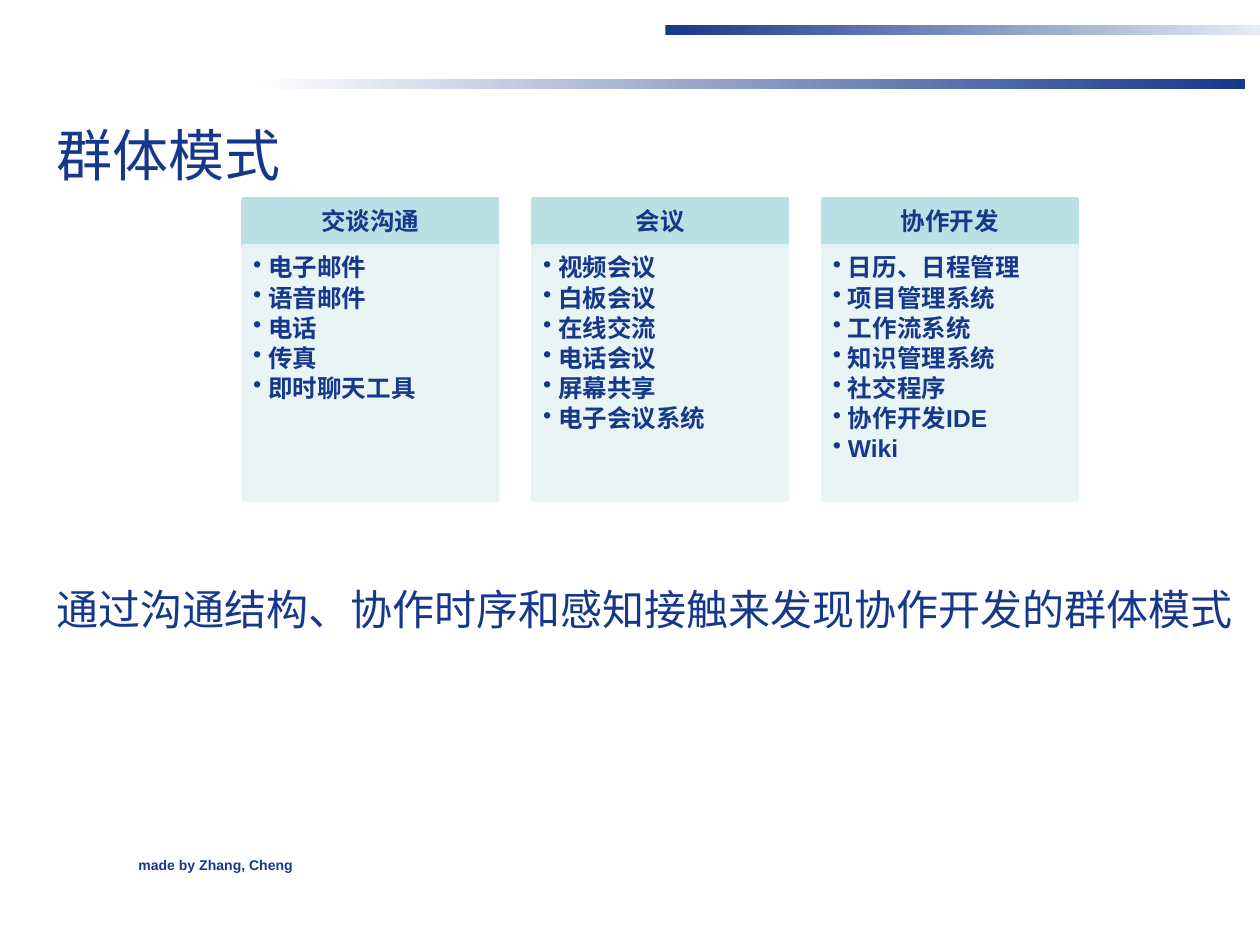
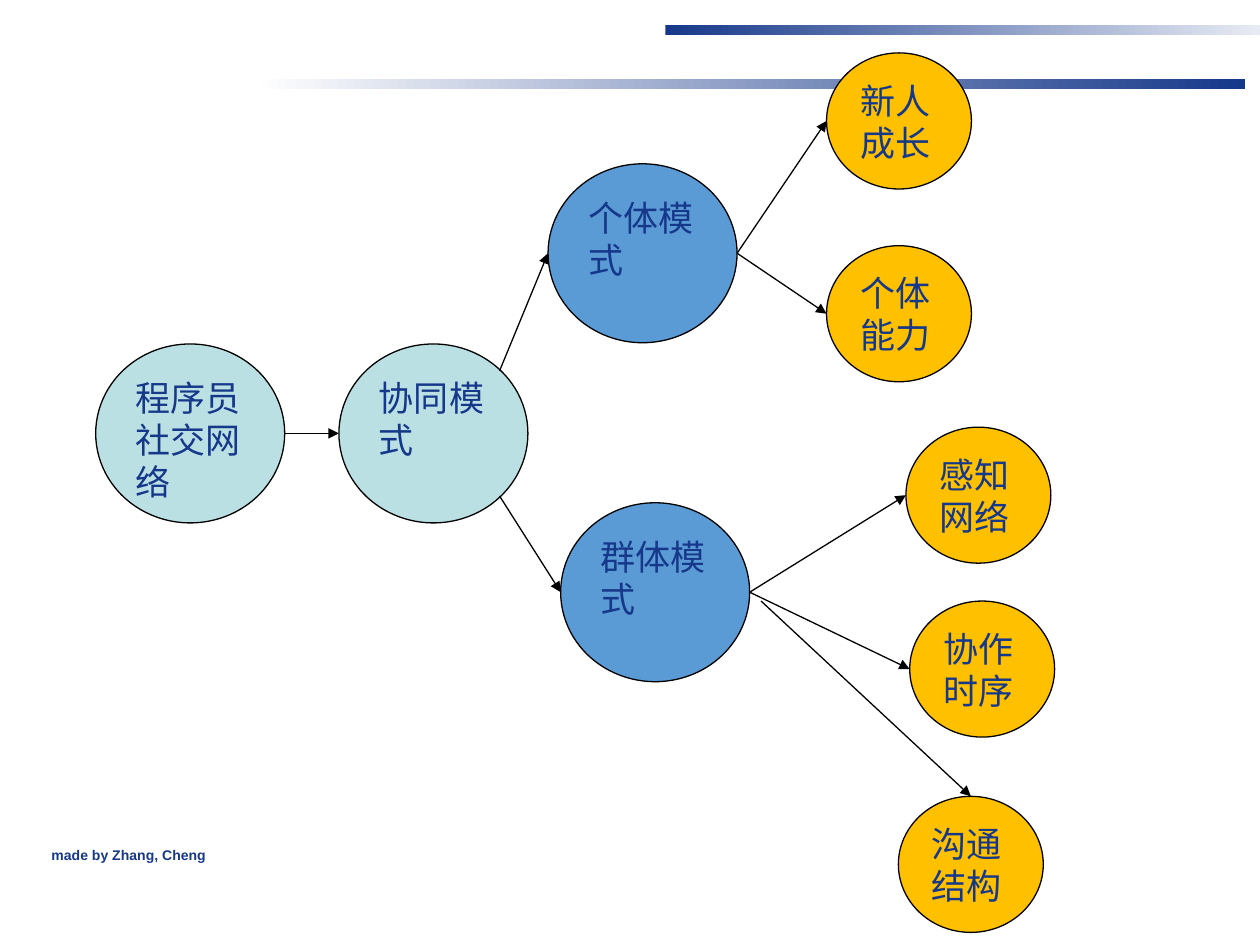
from dataclasses import dataclass

from lxml import etree
from pptx import Presentation
from pptx.dml.color import RGBColor
from pptx.enum import shapes, text
from pptx.oxml import ns
from pptx.util import Inches, Pt


@dataclass(frozen=True)
class Theme:
    font: str = "Arial"
    navy: str = "16388A"
    white: str = "FFFFFF"
    mist: str = "E7EBF3"
    teal: str = "BBE0E3"
    pale_teal: str = "E7F3F4"
    blue: str = "5B9BD5"
    amber: str = "FFC000"
    black: str = "000000"
    title_size: int = 32
    statement_size: int = 24
    node_size: int = 20
    card_size: int = 14
    footer_size: int = 8


THEME = Theme()
TITLE_ONLY, BLANK = 5, 6

CARDS = {
    "交谈沟通": ["电子邮件", "语音邮件", "电话", "传真", "即时聊天工具"],
    "会议": ["视频会议", "白板会议", "在线交流", "电话会议", "屏幕共享", "电子会议系统"],
    "协作开发": ["日历、日程管理", "项目管理系统", "工作流系统", "知识管理系统",
             "社交程序", "协作开发IDE", "Wiki"],
}

LARGE, SMALL = (1.5, 1.42), (1.15, 1.08)
NODES = {
    "程序员社交网络": (0.76, 2.73, LARGE, THEME.teal),
    "协同模式": (2.69, 2.73, LARGE, THEME.teal),
    "个体模式": (4.35, 1.3, LARGE, THEME.blue),
    "群体模式": (4.45, 3.99, LARGE, THEME.blue),
    "沟通结构": (7.13, 6.32, SMALL, THEME.amber),
    "协作时序": (7.22, 4.77, SMALL, THEME.amber),
    "感知网络": (7.19, 3.39, SMALL, THEME.amber),
    "新人成长": (6.56, 0.42, SMALL, THEME.amber),
    "个体能力": (6.56, 1.95, SMALL, THEME.amber),
}
SITES = {
    "left": (0, 0.5),
    "right": (1, 0.5),
    "top": (0.5, 0),
    "upper right": (0.85, 0.15),
    "lower right": (0.85, 0.85),
}
LINKS = [
    ("程序员社交网络", "right", "协同模式"),
    ("协同模式", "upper right", "个体模式"),
    ("协同模式", "lower right", "群体模式"),
    ("个体模式", "right", "新人成长"),
    ("个体模式", "right", "个体能力"),
    ("群体模式", "right", "协作时序"),
    ("群体模式", "right", "感知网络"),
]


def site(name, side):
    left, top, (width, height), _ = NODES[name]
    across, down = SITES[side]
    return left + across * width, top + down * height


class Deck:
    def __init__(self, theme):
        self.theme = theme
        self.presentation = Presentation()
        self.presentation.slide_width = Inches(10)
        self.presentation.slide_height = Inches(7.5)
        self.slide = None

    def add_slide(self, layout, footer_left, footer_top):
        layouts = self.presentation.slide_layouts
        self.slide = self.presentation.slides.add_slide(layouts[layout])
        self.band((2.01, 0.63, 7.87, 0.08), self.theme.white, self.theme.navy)
        self.band((5.28, 0.2, 4.72, 0.08), self.theme.navy, self.theme.mist)
        self.text_box((footer_left, footer_top, 4.33, 0.5), "made by Zhang, Cheng",
                      self.theme.footer_size, bold=True)

    def shape(self, kind, box, fill=None, line=None, width=0.75):
        shape = self.slide.shapes.add_shape(kind, *map(Inches, box))
        shape.shadow.inherit = False
        if fill:
            shape.fill.solid()
            shape.fill.fore_color.rgb = RGBColor.from_string(fill)
        if line:
            shape.line.color.rgb = RGBColor.from_string(line)
            shape.line.width = Pt(width)
        else:
            shape.line.fill.background()
        return shape

    def band(self, box, start, end):
        shape = self.shape(shapes.MSO_SHAPE.RECTANGLE, box)
        shape.fill.gradient()
        shape.fill.gradient_angle = 0
        for stop, color in zip(shape.fill.gradient_stops, (start, end)):
            stop.color.rgb = RGBColor.from_string(color)

    def set_text(self, shape, lines, size, bold=False, align=text.PP_ALIGN.LEFT,
                 anchor=text.MSO_ANCHOR.TOP, insets=(0.1, 0.05, 0.1, 0.05),
                 bullet=False, spacing=None, after=0):
        frame = shape.text_frame
        frame.word_wrap = True
        frame.vertical_anchor = anchor
        (frame.margin_left, frame.margin_top,
         frame.margin_right, frame.margin_bottom) = map(Inches, insets)
        frame.text = "\n".join(lines)
        for paragraph in frame.paragraphs:
            if bullet:
                properties = paragraph._p.get_or_add_pPr()
                properties.set("marL", str(Inches(0.12)))
                properties.set("indent", str(Inches(-0.12)))
                etree.SubElement(properties, ns.qn("a:buChar"), char="•")
            paragraph.alignment = align
            paragraph.line_spacing = spacing
            paragraph.space_after = Pt(after)
            paragraph.font.name = self.theme.font
            paragraph.font.size = Pt(size)
            paragraph.font.bold = bold
            paragraph.font.color.rgb = RGBColor.from_string(self.theme.navy)

    def text_box(self, box, words, size, bold=False):
        shape = self.slide.shapes.add_textbox(*map(Inches, box))
        self.set_text(shape, [words], size, bold)

    def title(self, box, words):
        shape = self.slide.shapes.title
        shape.left, shape.top, shape.width, shape.height = map(Inches, box)
        self.set_text(shape, [words], self.theme.title_size)
        shape.text_frame.auto_size = text.MSO_AUTO_SIZE.SHAPE_TO_FIT_TEXT

    def card(self, left, heading, items):
        theme = self.theme
        rectangle = shapes.MSO_SHAPE.RECTANGLE
        header = self.shape(rectangle, (left, 1.58, 2.02, 0.38), theme.teal, theme.teal, 2)
        self.set_text(header, [heading], theme.card_size, True, text.PP_ALIGN.CENTER,
                      text.MSO_ANCHOR.MIDDLE, (0.11, 0.06, 0.11, 0.06),
                      spacing=0.9, after=4.9)
        body = self.shape(rectangle, (left, 1.95, 2.02, 2.02),
                          theme.pale_teal, theme.pale_teal, 2)
        for color in body._element.spPr.iter(ns.qn("a:srgbClr")):
            etree.SubElement(color, ns.qn("a:alpha"), val="90000")
        self.set_text(body, items, theme.card_size, True, insets=(0.08, 0.08, 0.11, 0.12),
                      bullet=True, spacing=0.9, after=2.1)

    def node(self, name):
        left, top, size, color = NODES[name]
        shape = self.shape(shapes.MSO_SHAPE.OVAL, (left, top, *size), color, self.theme.black)
        self.set_text(shape, [name], self.theme.node_size)

    def arrow(self, start, end):
        connector = self.slide.shapes.add_connector(
            shapes.MSO_CONNECTOR.STRAIGHT, *map(Inches, (*start, *end)))
        connector.line.color.rgb = RGBColor.from_string(self.theme.black)
        connector.line.width = Pt(0.75)
        properties = connector._element.spPr
        etree.SubElement(properties.find(ns.qn("a:ln")), ns.qn("a:tailEnd"), type="triangle")
        etree.SubElement(properties, ns.qn("a:effectLst"))


def build_group_patterns(deck):
    deck.add_slide(TITLE_ONLY, 1, 6.75)
    deck.title((0.35, 0.91, 9.65, 0.64), "群体模式")
    for column, (heading, items) in enumerate(CARDS.items()):
        deck.card(1.93 + 2.3 * column, heading, items)
    deck.text_box((0.35, 4.58, 9.65, 0.5),
                  "通过沟通结构、协作时序和感知接触来发现协作开发的群体模式",
                  deck.theme.statement_size)


def build_pattern_tree(deck):
    deck.add_slide(BLANK, 0.31, 6.67)
    for name in NODES:
        deck.node(name)
    for source, side, target in LINKS:
        deck.arrow(site(source, side), site(target, "left"))
    deck.arrow((6.04, 4.77), site("沟通结构", "top"))


def main():
    deck = Deck(THEME)
    build_group_patterns(deck)
    build_pattern_tree(deck)
    deck.presentation.save("out.pptx")


if __name__ == "__main__":
    main()
